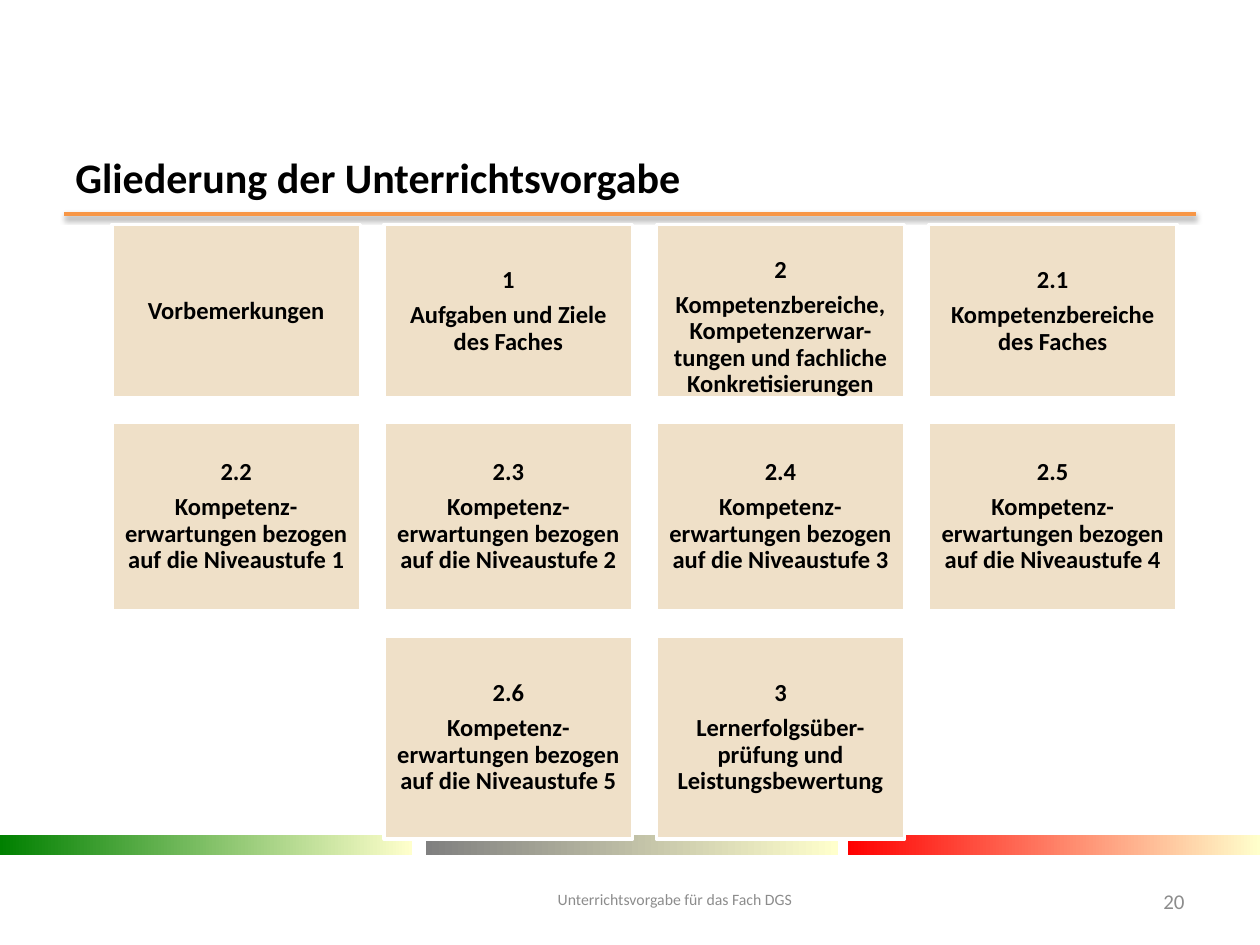
from dataclasses import dataclass

from lxml.etree import SubElement
from pptx import Presentation
from pptx.dml.color import RGBColor
from pptx.enum.shapes import MSO_CONNECTOR, MSO_SHAPE
from pptx.enum.text import MSO_ANCHOR, PP_ALIGN
from pptx.oxml.ns import qn
from pptx.util import Inches, Pt


@dataclass(frozen=True)
class Theme:
    font: str = "Calibri"
    ink: str = "000000"
    muted: str = "8C8C8C"
    card: str = "EFE0C8"
    edge: str = "FFFFFF"
    rule: str = "F79646"
    green: str = "008000"
    gray: str = "808080"
    red: str = "FF0000"
    cream: str = "FFFFCC"
    head: int = 24
    body: int = 14
    page: int = 12
    foot: int = 9


class Deck:
    def __init__(self, slide, theme):
        self.slide = slide
        self.theme = theme

    def style(self, frame, text, size, color, align, bold=False, space=0.9, after=0):
        frame.word_wrap = True
        frame.vertical_anchor = MSO_ANCHOR.MIDDLE
        frame.text = text
        for para in frame.paragraphs:
            para.alignment = align
            para.line_spacing = space
            para.space_after = Pt(after)
            for run in para.runs:
                run.font.name = self.theme.font
                run.font.size = Pt(size)
                run.font.bold = bold
                run.font.color.rgb = RGBColor.from_string(color)

    def label(self, box, *look, **more):
        shape = self.slide.shapes.add_textbox(*map(Inches, box))
        self.style(shape.text_frame, *look, **more)

    def rect(self, box):
        shape = self.slide.shapes.add_shape(MSO_SHAPE.RECTANGLE, *map(Inches, box))
        shape.shadow.inherit = False
        return shape

    def band(self, box, color):
        shape = self.rect(box)
        shape.line.fill.background()
        shape.fill.gradient()
        shape.fill.gradient_angle = 0
        for stop, tone in zip(shape.fill.gradient_stops, (color, self.theme.cream)):
            stop.color.rgb = RGBColor.from_string(tone)

    def card(self, box, text):
        shape = self.rect(box)
        shape.fill.solid()
        shape.fill.fore_color.rgb = RGBColor.from_string(self.theme.card)
        shape.line.color.rgb = RGBColor.from_string(self.theme.edge)
        shape.line.width = Pt(2)
        frame = shape.text_frame
        frame.margin_left = frame.margin_right = Inches(0.06)
        frame.margin_top = frame.margin_bottom = Inches(0.06)
        self.style(frame, text, self.theme.body, self.theme.ink,
                   PP_ALIGN.CENTER, bold=True, after=5)
        return frame

    def rule(self, left, right, top):
        line = self.slide.shapes.add_connector(
            MSO_CONNECTOR.STRAIGHT, *map(Inches, (left, top, right, top)))
        line.line.color.rgb = RGBColor.from_string(self.theme.rule)
        line.line.width = Pt(2)
        # Soft shadow below the line
        effect = SubElement(line._element.spPr, qn("a:effectLst"))
        shade = SubElement(effect, qn("a:outerShdw"), blurRad=str(Pt(3.1)),
                           dist=str(Pt(1.6)), dir="5400000", rotWithShape="0")
        color = SubElement(shade, qn("a:srgbClr"), val="000000")
        SubElement(color, qn("a:alpha"), val="38000")


def level(num):
    return f"2.{num + 1}\nKompetenz-erwartungen bezogen auf die Niveaustufe {num}"


def main():
    prs = Presentation()
    prs.slide_width, prs.slide_height = Inches(10), Inches(7.5)
    theme = Theme()
    deck = Deck(prs.slides.add_slide(prs.slide_layouts[6]), theme)

    # Rule and colour bands
    deck.rule(0.51, 9.49, 1.7)
    for left, color in ((0, theme.green), (3.38, theme.gray), (6.73, theme.red)):
        deck.band((left, 6.63, 3.27, 0.16), color)

    # Title and footer
    deck.label((0.5, 1.23, 9, 0.39), "Gliederung der Unterrichtsvorgabe",
               theme.head, theme.ink, PP_ALIGN.LEFT, bold=True)
    deck.label((3.74, 6.95, 3.23, 0.4), "Unterrichtsvorgabe für das Fach DGS",
               theme.foot, theme.muted, PP_ALIGN.CENTER)
    deck.label((8.86, 6.95, 0.64, 0.4), "20",
               theme.page, theme.muted, PP_ALIGN.RIGHT, space=1)

    # Cards: top, height, first column, texts
    rows = (
        (1.78, 1.38, 0, (
            "Vorbemerkungen",
            "1\nAufgaben und Ziele des Faches",
            "2\nKompetenzbereiche, Kompetenzerwar-tungen und fachliche Konkretisierungen",
            "2.1\nKompetenzbereiche des Faches")),
        (3.35, 1.5, 0, [level(num) for num in range(1, 5)]),
        (5.05, 1.61, 1, (
            level(5),
            "3\nLernerfolgsüber-prüfung und Leistungsbewertung")),
    )
    gap = 0.19
    wide = 1.97
    frames = []
    for top, high, first, texts in rows:
        for col, text in enumerate(texts, first):
            box = (0.89 + col * (wide + gap), top, wide, high)
            frames.append(deck.card(box, text))

    # The longest text hangs low in its card
    long = frames[2]
    long.vertical_anchor = MSO_ANCHOR.TOP
    long.margin_top, long.margin_bottom = Inches(0.26), 0

    prs.save("out.pptx")


if __name__ == "__main__":
    main()
